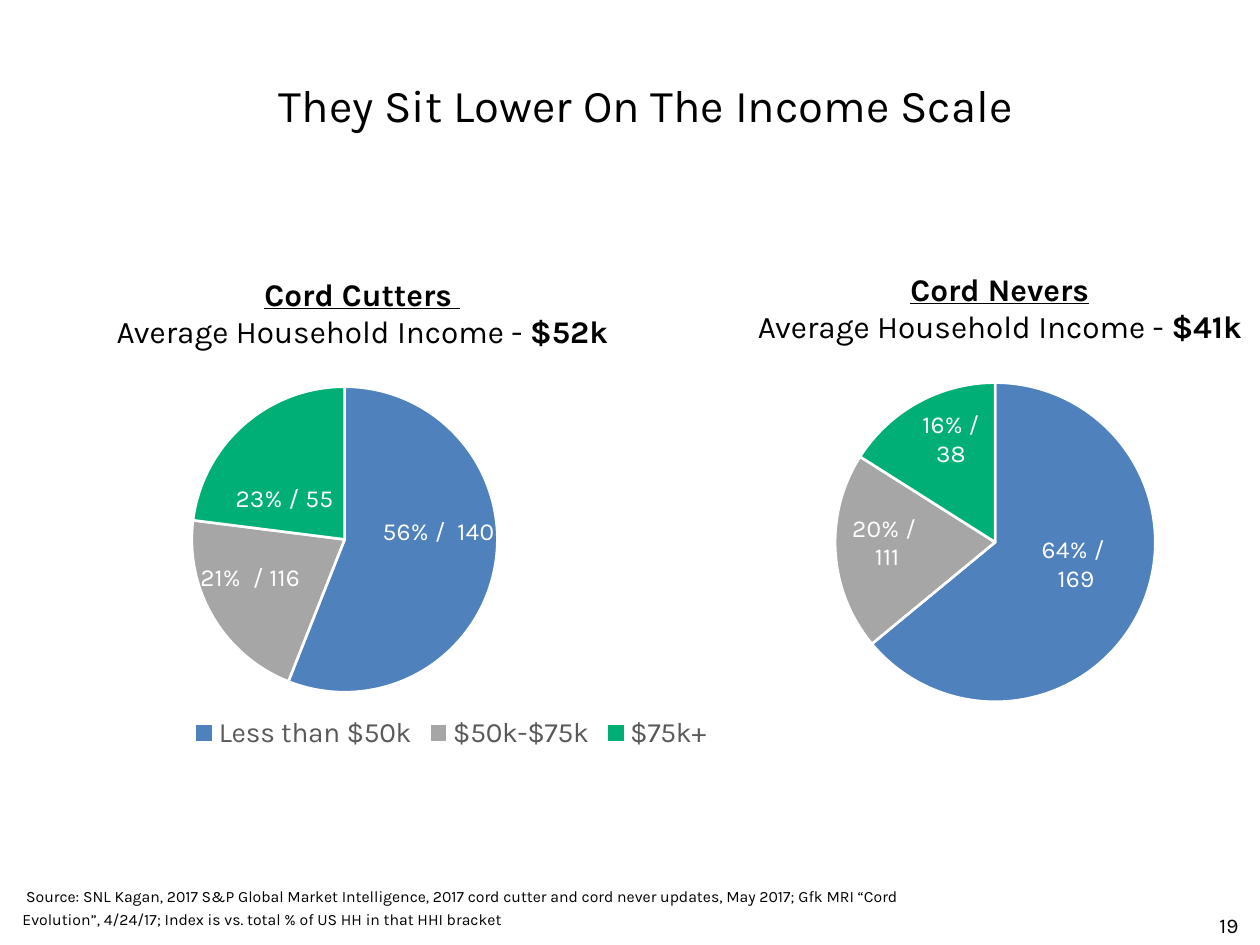
"""Builds a slide comparing household income of cord cutters and cord nevers."""
from lxml import etree
from pptx import Presentation
from pptx.chart.data import CategoryChartData
from pptx.dml.color import RGBColor
from pptx.enum.chart import XL_CHART_TYPE, XL_LABEL_POSITION, XL_LEGEND_POSITION
from pptx.enum.text import MSO_ANCHOR, PP_ALIGN
from pptx.oxml.ns import qn
from pptx.util import Inches, Pt

PIE = XL_CHART_TYPE.PIE
LABEL_CENTER = XL_LABEL_POSITION.CENTER
LEGEND_BOTTOM = XL_LEGEND_POSITION.BOTTOM
TOP, BOTTOM = MSO_ANCHOR.TOP, MSO_ANCHOR.BOTTOM
LEFT, CENTER = PP_ALIGN.LEFT, PP_ALIGN.CENTER
BLACK = RGBColor(0x00, 0x00, 0x00)
WHITE = RGBColor(0xFF, 0xFF, 0xFF)
LEGEND_GRAY = RGBColor(0x59, 0x59, 0x59)
BLUE = RGBColor(0x4F, 0x81, 0xBD)
GRAY = RGBColor(0xA6, 0xA6, 0xA6)
GREEN = RGBColor(0x00, 0xAF, 0x75)
FONT = "Karla"
BRACKETS = ["Less than $50k", "$50k-$75k", "$75k+"]


def write(paragraph, text, size=18, color=BLACK, bold=False, underline=False,
          align=LEFT, spacing=None):
    paragraph.alignment = align
    if spacing:
        paragraph.line_spacing = spacing
    run = paragraph.add_run()
    run.text = text
    run.font.name = FONT
    run.font.size = Pt(size)
    run.font.color.rgb = color
    run.font.bold = bold
    run.font.underline = underline


def set_layout(parent, index, **settings):
    layout = etree.Element(qn("c:layout"))
    manual = etree.SubElement(layout, qn("c:manualLayout"))
    for tag, value in settings.items():
        etree.SubElement(manual, qn(f"c:{tag}")).set("val", str(value))
    for old in parent.findall(qn("c:layout")):
        parent.remove(old)
    parent.insert(index, layout)


prs = Presentation()
prs.slide_width, prs.slide_height = Inches(10), Inches(7.5)
slide = prs.slides.add_slide(prs.slide_layouts[5])

title = slide.shapes.title
title.left, title.top = Inches(0.26), Inches(0.56)
title.width, title.height = Inches(9.74), Inches(1.45)
title.text_frame.vertical_anchor = TOP
write(title.text_frame.paragraphs[0], "They Sit Lower On The Income Scale",
      size=26, align=CENTER)

pies = [
    ((-0.19, 2.55, 7.54, 3.44), (0.227, 0.151, 0.322, 0.705), True,
     [(0.56, "56% /  140", 0.02, -0.05),
      (0.21, "21%  / 116", -0.03, 0),
      (0.23, "23% / 55", -0.01, 0.04)]),
    ((5.11, 2.74, 4.47, 2.84), (0.332, 0.105, 0.584, 0.895), False,
     [(0.64, "64% /\n 169", 0.01, -0.03),
      (0.2, "20% / \n111", -0.05, -0.01),
      (0.16, "16% /\n38", -0.01, -0.09)]),
]
for place, (x, y, w, h), has_legend, slices in pies:
    data = CategoryChartData(number_format="0%")
    data.categories = BRACKETS
    data.add_series("Share of households", [entry[0] for entry in slices])
    chart = slide.shapes.add_chart(PIE, *map(Inches, place), data).chart
    chart.has_title = False
    chart.font.name, chart.font.size = FONT, Pt(10)
    chart.font.color.rgb = BLACK
    chart.has_legend = has_legend
    if has_legend:
        chart.legend.position = LEGEND_BOTTOM
        chart.legend.include_in_layout = False
        chart.legend.font.name, chart.legend.font.size = FONT, Pt(16)
        chart.legend.font.color.rgb = LEGEND_GRAY
    plot_area = chart.plots[0]._element.getparent()
    set_layout(plot_area, 0, layoutTarget="inner", xMode="edge", yMode="edge",
               x=x, y=y, w=w, h=h)

    series = chart.plots[0].series[0]
    labels = series.data_labels
    labels.show_value = True
    labels.number_format, labels.number_format_is_linked = "0%", False
    labels.font.name, labels.font.size = FONT, Pt(14)
    labels.font.color.rgb = WHITE
    for index, (color, (_, text, dx, dy)) in enumerate(zip((BLUE, GRAY, GREEN), slices)):
        point = series.points[index]
        point.format.fill.solid()
        point.format.fill.fore_color.rgb = color
        point.format.line.color.rgb = WHITE
        point.format.line.width = Pt(1.5)
        label = point.data_label
        frame = label.text_frame
        for number, line in enumerate(text.split("\n")):
            paragraph = frame.add_paragraph() if number else frame.paragraphs[0]
            write(paragraph, line, size=14, color=WHITE, align=CENTER)
        label.position = LABEL_CENTER
        set_layout(labels._element.findall(qn("c:dLbl"))[index], 1, x=dx, y=dy)

source = "Source: SNL Kagan, 2017 S&P Global Market Intelligence, 2017 cord cutter and cord never updates, May 2017; Gfk MRI “Cord Evolution”, 4/24/17; Index is vs. total % of US HH in that HHI bracket"
heading = {"bold": True, "underline": True, "align": CENTER}
average = ("Average Household Income - ", {"align": CENTER})
amount = {"bold": True, "align": CENTER}
text_blocks = [
    ((0.08, 6.95, 7.54, 0.47), BOTTOM,
     [[(" " + source, {"size": 9, "spacing": Pt(13)})]]),
    ((0.72, 2.13, 4.31, 0.71), TOP,
     [[("Cord Cutters ", heading)], [average, ("$52k", amount)]]),
    ((5.87, 2.09, 4.13, 0.71), TOP,
     [[("Cord Nevers", heading)], [average, ("$41k", amount)]]),
    ((9.58, 7.19, 2.25, 0.4), TOP, [[("19", {"size": 12})]]),
]
for place, anchor, lines in text_blocks:
    frame = slide.shapes.add_textbox(*map(Inches, place)).text_frame
    frame.word_wrap = True
    frame.vertical_anchor = anchor
    for number, runs in enumerate(lines):
        paragraph = frame.add_paragraph() if number else frame.paragraphs[0]
        for text, style in runs:
            write(paragraph, text, **style)

prs.save("out.pptx")
